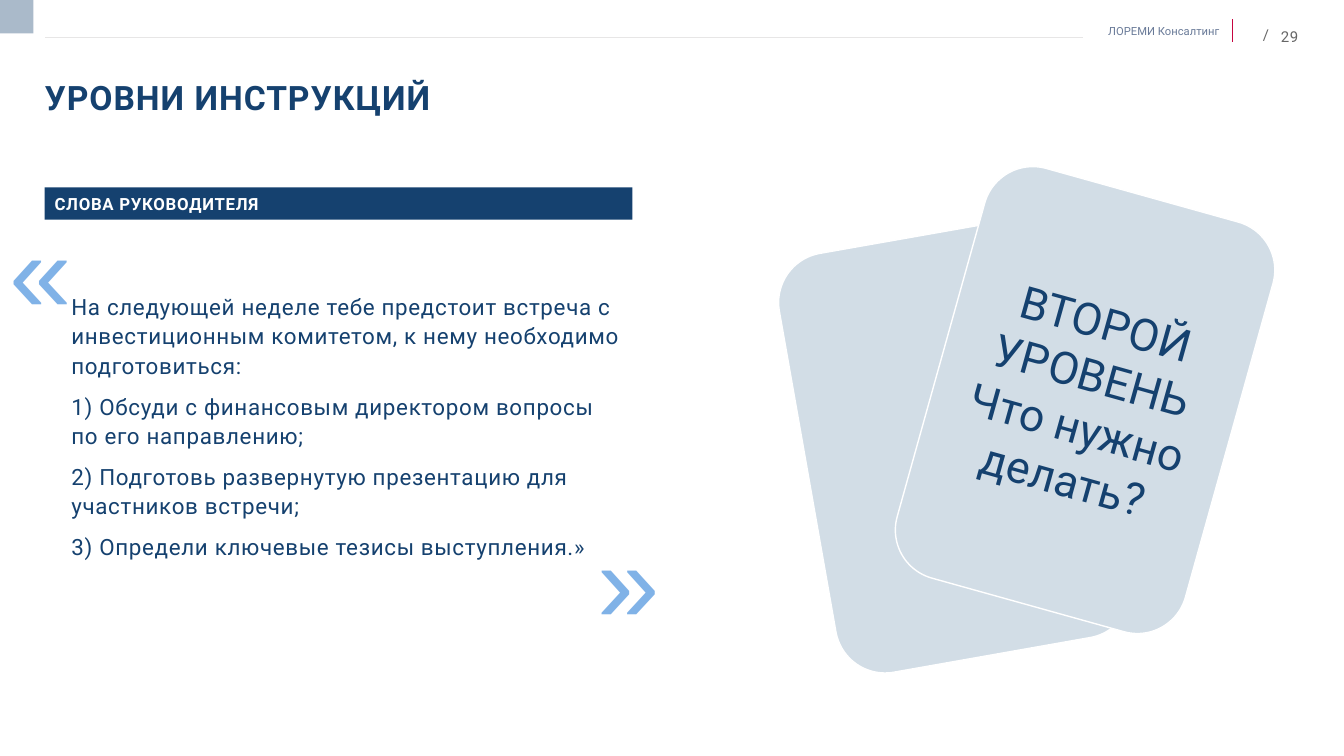
import pptx
import pptx.util
import pptx.dml.color
import pptx.enum.shapes
import pptx.enum.text
import pptx.oxml.ns
import lxml.etree

Pt = pptx.util.Pt
SHAPE = pptx.enum.shapes.MSO_SHAPE
ALIGN = pptx.enum.text.PP_ALIGN
ANCHOR = pptx.enum.text.MSO_ANCHOR

COLORS = {
    "navy": "15416F", "card": "D2DDE6", "quote": "80B2E7", "white": "FFFFFF",
    "corner": "AABACA", "rule": "E7E6E6", "divider": "C60440",
    "company": "697A98", "page": "666666",
}

# Content; boxes are left, top, width, height in points
TITLE = "УРОВНИ ИНСТРУКЦИЙ"
HEADING = "СЛОВА РУКОВОДИТЕЛЯ"
COMPANY = "ЛОРЕМИ Консалтинг"
PAGE = "29"
SPEECH = [
    "На следующей неделе тебе предстоит встреча с инвестиционным комитетом, "
    "к нему необходимо подготовиться:",
    "1) Обсуди с финансовым директором вопросы по его направлению;",
    "2) Подготовь развернутую презентацию для участников встречи;",
    "3) Определи ключевые тезисы выступления.»",
]
CARD_TEXT = ["ВТОРОЙ УРОВЕНЬ", "Что нужно делать?"]
QUOTES = [("«", 0, 139.7), ("»", 419.8, 361.4)]
CARDS = [(575.3, 166.3, -10, []), (668.2, 133.9, 15.6, CARD_TEXT)]
RULES = [(880.6, 13.7, 880.6, 30.2, "divider", 0.5),
         (773.3, 26.9, 31.9, 26.9, "rule", 0.75)]
LEFT, COLUMN = 31.9, 419.8
CARD_SIZE = (213.8, 303.8)
INSETS = (7.2, 3.6, 7.2, 3.6)
NO_INSETS = (0, 0, 0, 0)


def rgb(name):
    return pptx.dml.color.RGBColor.from_string(COLORS[name])


def write(sp, paragraphs, size, color, font="Roboto", bold=False, tracking=0,
          align=ALIGN.LEFT, anchor=ANCHOR.TOP, insets=INSETS,
          before=0, after=0, spacing=1.0):
    """Fill a shape with paragraphs that share one format; tracking in points."""
    tf = sp.text_frame
    tf.word_wrap = True
    tf.vertical_anchor = anchor
    tf.margin_left, tf.margin_top, tf.margin_right, tf.margin_bottom = map(Pt, insets)
    for i, text in enumerate(paragraphs):
        p = tf.add_paragraph() if i else tf.paragraphs[0]
        p.alignment = align
        p.line_spacing = spacing
        p.space_before, p.space_after = Pt(before), Pt(after)
        r = p.add_run()
        r.text = text
        r.font.name, r.font.size, r.font.bold = font, Pt(size), bold
        r.font.color.rgb = rgb(color)
        if tracking:
            r._r.get_or_add_rPr().set("spc", str(round(tracking * 100)))


def add_text(s, box, paragraphs, **fmt):
    write(s.shapes.add_textbox(*map(Pt, box)), paragraphs, **fmt)


def add_block(s, kind, box, fill, outline=None, rotation=0):
    sp = s.shapes.add_shape(kind, *map(Pt, box))
    sp.shadow.inherit = False
    sp.fill.solid()
    sp.fill.fore_color.rgb = rgb(fill)
    if outline:
        sp.line.color.rgb = rgb(outline)
        sp.line.width = Pt(1)
    else:
        sp.line.fill.background()
    sp.rotation = rotation
    return sp


def add_rule(s, x1, y1, x2, y2, color, width):
    line = s.shapes.add_connector(
        pptx.enum.shapes.MSO_CONNECTOR.STRAIGHT, *map(Pt, (x1, y1, x2, y2)))
    line.line.color.rgb = rgb(color)
    line.line.width = Pt(width)
    lxml.etree.SubElement(line._element.spPr, pptx.oxml.ns.qn("a:effectLst"))


def add_header(s):
    for rule in RULES:
        add_rule(s, *rule)
    add_block(s, SHAPE.RECTANGLE, (0, 0, 23.8, 23.8), "corner", rotation=180)
    add_text(s, (772.6, 17.3, 98.6, 9.4), [COMPANY], size=8, color="company",
             align=ALIGN.RIGHT, anchor=ANCHOR.MIDDLE, insets=NO_INSETS, before=3)
    add_text(s, (897.1, 21.6, 30.2, 9.4), [PAGE], size=10.7, color="page",
             tracking=0.4, align=ALIGN.RIGHT, anchor=ANCHOR.MIDDLE, insets=NO_INSETS)
    add_text(s, (895, 14.4, 18.7, 20.2), ["/"], size=10.7, color="page")


def add_speech(s):
    add_text(s, (LEFT, 54.7, COLUMN, 28.8), [TITLE], size=24, color="navy",
             bold=True, tracking=0.7, insets=NO_INSETS)
    bar = add_block(s, SHAPE.RECTANGLE, (LEFT, 133.9, COLUMN, 23), "navy")
    write(bar, [HEADING], size=12, color="white", bold=True, tracking=0.5,
          anchor=ANCHOR.MIDDLE)
    for mark, x, y in QUOTES:
        add_text(s, (x, y, 65.5, 104.4), [mark], size=80, color="quote",
                 font="Arial", tracking=0.4, after=8)
    add_text(s, (43.9, 203.8, 408.2, 202.3), SPEECH, size=16, color="navy",
             tracking=0.5, after=8, spacing=1.1)


def add_cards(s):
    for x, y, rotation, text in CARDS:
        card = add_block(s, SHAPE.ROUNDED_RECTANGLE, (x, y, *CARD_SIZE), "card",
                         outline="white", rotation=rotation)
        write(card, text, size=32, color="navy", align=ALIGN.CENTER,
              anchor=ANCHOR.MIDDLE)


def main():
    prs = pptx.Presentation()
    prs.slide_width, prs.slide_height = Pt(960), Pt(540)
    s = prs.slides.add_slide(prs.slide_layouts[6])
    add_header(s)
    add_cards(s)
    add_speech(s)
    prs.save("out.pptx")


if __name__ == "__main__":
    main()
